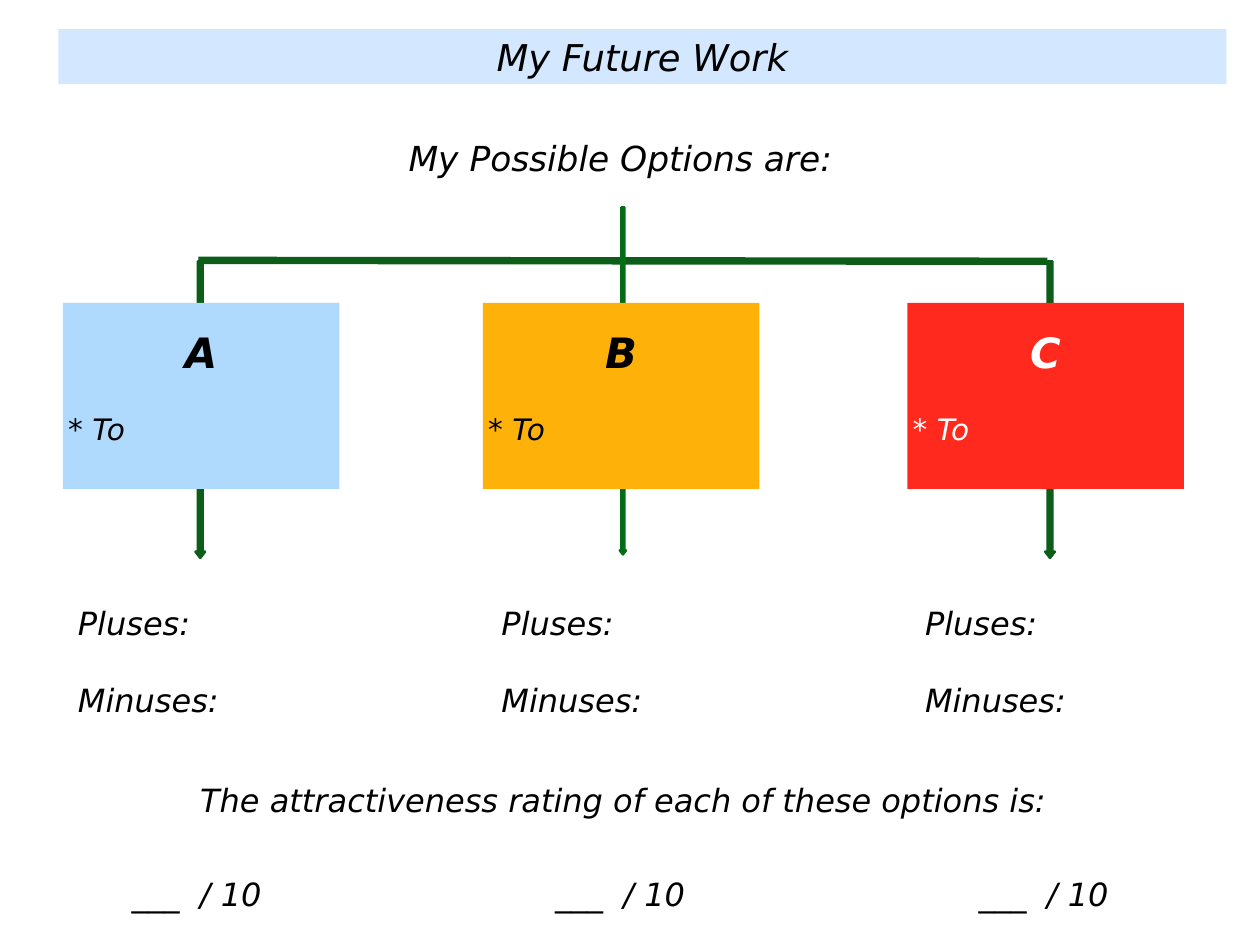
from dataclasses import dataclass

from lxml import etree
from pptx import Presentation
from pptx.dml.color import RGBColor
from pptx.enum.shapes import MSO_CONNECTOR, MSO_SHAPE
from pptx.enum.text import MSO_ANCHOR, PP_ALIGN
from pptx.oxml.ns import qn
from pptx.util import Inches, Pt

RECTANGLE = MSO_SHAPE.RECTANGLE
ARROW = MSO_SHAPE.RIGHT_ARROW
STRAIGHT = MSO_CONNECTOR.STRAIGHT
TOP = MSO_ANCHOR.TOP
LEFT, CENTER = PP_ALIGN.LEFT, PP_ALIGN.CENTER

FONT = "DejaVu Sans"
BLACK, WHITE, GREEN, MID_GREEN = "000000", "FFFFFF", "0B5D18", "036E16"
INSET = 0.06
BOX_TOP, BOX_WIDTH, BOX_HEIGHT = 3.42, 3.12, 2.1
BOX_LINE = 28
NOTES_LEFT, NOTES_STEP = 0.82, 4.78


@dataclass
class Line:
    text: str
    size: float
    align: PP_ALIGN = CENTER
    color: str = BLACK
    bold: bool = False
    before: float = 0
    spacing: float | None = None


@dataclass
class Arrow:
    center: float
    top: float
    length: float
    thickness: float
    outline: str


@dataclass
class Option:
    letter: str
    box_left: float
    fill: str
    color: str
    arrow: Arrow


OPTIONS = [
    Option("A", 0.71, "AFD9FD", BLACK, Arrow(2.26, 2.95, 3.35, 0.11, GREEN)),
    Option("B", 5.45, "FEB109", BLACK, Arrow(7.03, 2.34, 3.92, 0.07, MID_GREEN)),
    Option("C", 10.24, "FF2A1D", WHITE, Arrow(11.85, 2.95, 3.35, 0.11, GREEN)),
]

NOTES = [
    Line("Pluses:", 26, LEFT),
    Line("Minuses:", 26, LEFT, before=32),
    Line("___  / 10", 26, before=126),
]


def rgb(value: str) -> RGBColor:
    return RGBColor.from_string(value)


def write(shape, lines: list[Line], top_inset: float = INSET) -> None:
    frame = shape.text_frame
    frame.word_wrap = True
    frame.vertical_anchor = TOP
    frame.margin_left = frame.margin_right = frame.margin_bottom = Inches(INSET)
    frame.margin_top = Inches(top_inset)
    for index, line in enumerate(lines):
        paragraph = frame.add_paragraph() if index else frame.paragraphs[0]
        paragraph.alignment = line.align
        paragraph.space_before = Pt(line.before)
        if line.spacing:
            paragraph.line_spacing = Pt(line.spacing)
        run = paragraph.add_run()
        run.text = line.text
        run.font.name = FONT
        run.font.size = Pt(line.size)
        run.font.italic = True
        run.font.bold = line.bold
        run.font.color.rgb = rgb(line.color)


def add_text(slide, left: float, top: float, width: float, height: float,
             lines: list[Line]) -> None:
    box = slide.shapes.add_textbox(
        Inches(left), Inches(top), Inches(width), Inches(height))
    write(box, lines)


def add_filled(slide, kind, left: float, top: float, width: float,
               height: float, fill: str):
    shape = slide.shapes.add_shape(
        kind, Inches(left), Inches(top), Inches(width), Inches(height))
    shape.shadow.inherit = False
    shape.fill.solid()
    shape.fill.fore_color.rgb = rgb(fill)
    shape.line.fill.background()
    return shape


def add_crossbar(slide) -> None:
    """Draw the line that joins the three branches."""
    bar = slide.shapes.add_connector(
        STRAIGHT, Inches(2.24), Inches(2.94), Inches(11.82), Inches(2.95))
    bar.line.color.rgb = rgb(GREEN)
    bar.line.width = Pt(6)
    etree.SubElement(bar._element.spPr, qn("a:effectLst"))


def add_down_arrow(slide, arrow: Arrow) -> None:
    middle = arrow.top + arrow.length / 2
    shape = add_filled(slide, ARROW, arrow.center - arrow.length / 2,
                       middle - arrow.thickness / 2,
                       arrow.length, arrow.thickness, GREEN)
    shape.rotation = 90
    shape.adjustments[0] = 0.5
    shape.adjustments[1] = 0.65
    shape.line.color.rgb = rgb(arrow.outline)
    shape.line.width = Pt(2)


def add_option_box(slide, option: Option) -> None:
    box = add_filled(slide, RECTANGLE, option.box_left, BOX_TOP,
                     BOX_WIDTH, BOX_HEIGHT, option.fill)
    write(box, [
        Line(option.letter, 34, color=option.color, bold=True, spacing=BOX_LINE),
        Line("* To", 24, LEFT, option.color, before=BOX_LINE, spacing=BOX_LINE),
    ], top_inset=0.45)


def main() -> None:
    deck = Presentation()
    deck.slide_width, deck.slide_height = Inches(14.22), Inches(10.67)
    slide = deck.slides.add_slide(deck.slide_layouts[6])

    add_crossbar(slide)
    for option in OPTIONS:
        add_down_arrow(slide, option.arrow)
    for column, option in enumerate(OPTIONS):
        add_option_box(slide, option)
        add_text(slide, NOTES_LEFT + column * NOTES_STEP, 6.75, 2.8, 3.56, NOTES)

    title = add_filled(slide, RECTANGLE, 0.66, 0.33, 13.18, 0.62, "D3E8FF")
    write(title, [Line("My Future Work", 30)])
    add_text(slide, 0.47, 1.49, 13.06, 0.69, [Line("My Possible Options are:", 28)])
    add_text(slide, 1.25, 8.75, 11.58, 0.6, [
        Line("The attractiveness rating of each of these options is:", 26)])

    deck.save("out.pptx")


if __name__ == "__main__":
    main()
